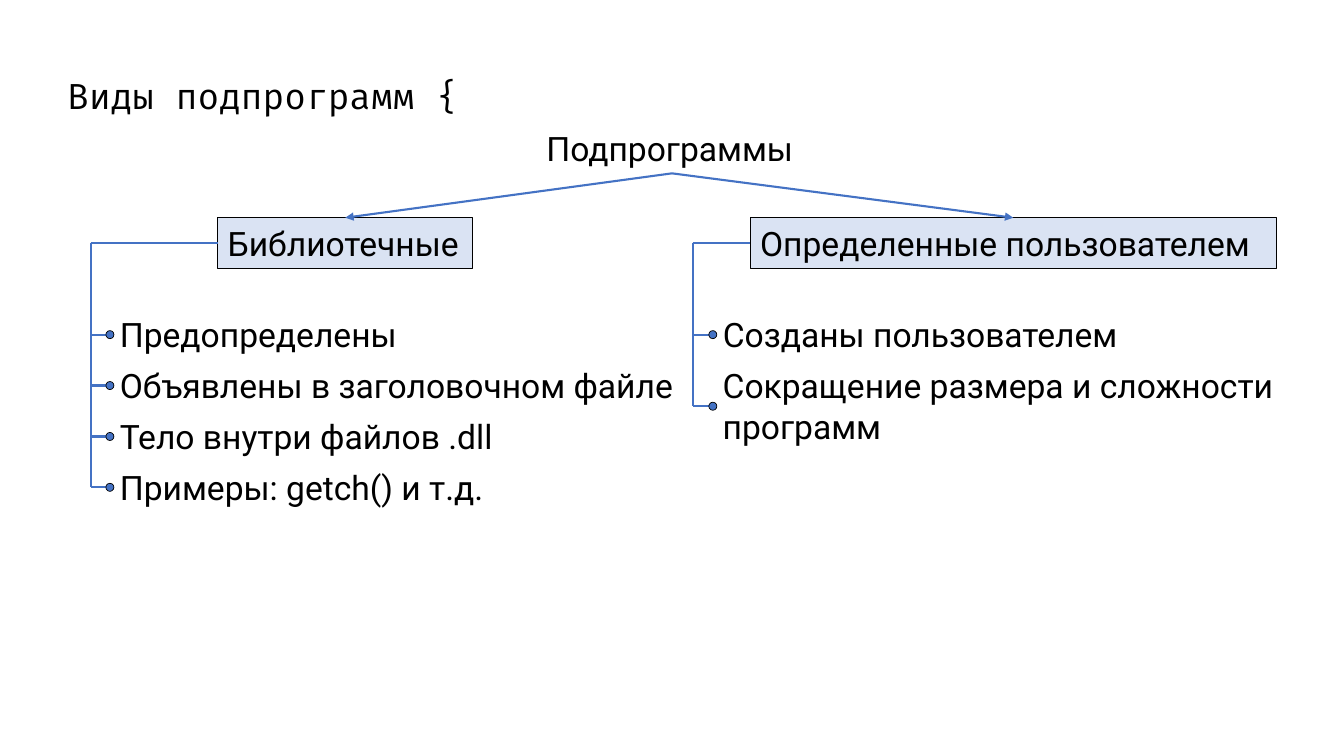
from lxml import etree
from pptx import Presentation
from pptx.dml.color import RGBColor
from pptx.enum.shapes import MSO_CONNECTOR as Line, MSO_SHAPE as Shape
from pptx.enum.text import MSO_ANCHOR as Anchor, MSO_AUTO_SIZE as AutoSize, PP_ALIGN as Align
from pptx.oxml.ns import qn
from pptx.util import Inches, Pt

COLORS = {"text": "000000", "box": "DAE3F3", "accent": "4472C4"}
ROW = 0.505       # step from one item to the next
LINE_BOX = 0.5    # height of a one-line label
FIRST_ITEM = 3.07
HEADING_TOP = 2.16
DOT = 0.08

prs = Presentation()
prs.slide_width, prs.slide_height = Inches(13.33), Inches(7.5)
slide = prs.slides.add_slide(prs.slide_layouts[6])
shapes = slide.shapes


def write(shape, text, wrap=False, font="Roboto", size=24):
    frame = shape.text_frame
    frame.text = text
    frame.word_wrap = wrap
    frame.auto_size = AutoSize.SHAPE_TO_FIT_TEXT
    frame.vertical_anchor = Anchor.TOP
    frame.paragraphs[0].alignment = Align.LEFT
    run_font = frame.paragraphs[0].runs[0].font
    run_font.name, run_font.size = font, Pt(size)
    run_font.color.rgb = RGBColor.from_string(COLORS["text"])
    return shape


def connect(x1, y1, x2, y2, arrow=False):
    link = shapes.add_connector(Line.STRAIGHT, *map(Inches, (x1, y1, x2, y2)))
    link.line.color.rgb = RGBColor.from_string(COLORS["accent"])
    link.line.width = Pt(1.5)
    if arrow:
        etree.SubElement(link.line._get_or_add_ln(), qn("a:tailEnd"), type="triangle")
    etree.SubElement(link._element.spPr, qn("a:effectLst"))
    return link


# Title
title = write(shapes.add_textbox(*map(Inches, (0.57, 0.73, 12.53, 0.49))),
              "Виды подпрограмм {", True, "Fira Code", 25.2)
title.text_frame.auto_size = AutoSize.NONE
title.text_frame.vertical_anchor = Anchor.MIDDLE
title.text_frame.paragraphs[0].line_spacing = 0.9

# Root of the tree
root = write(shapes.add_textbox(*map(Inches, (5.32, 1.22, 2.69, LINE_BOX))), "Подпрограммы")

# Branches: heading, its left and width, trunk x, items' left,
# items as (text, width, height)
branches = [
    ("Библиотечные", 2.16, 2.53, 0.9, 1.09, [
        ("Предопределены", 2.98, LINE_BOX),
        ("Объявлены в заголовочном файле", 5.75, LINE_BOX),
        ("Тело внутри файлов .dll", 3.96, LINE_BOX),
        ("Примеры: getch() и т.д.", 3.85, LINE_BOX)]),
    ("Определенные пользователем", 7.44, 5.22, 6.87, 7.07, [
        ("Созданы пользователем", 4.18, LINE_BOX),
        ("Сокращение размера и сложности программ", 6.03, 0.91)]),
]

for name, left, width, trunk, item_left, items in branches:
    # Heading box and the arrow from the root
    heading = shapes.add_shape(
        Shape.RECTANGLE, *map(Inches, (left, HEADING_TOP, width, LINE_BOX)))
    heading.shadow.inherit = False
    heading.fill.solid()
    heading.fill.fore_color.rgb = RGBColor.from_string(COLORS["box"])
    heading.line.color.rgb = RGBColor.from_string(COLORS["text"])
    heading.line.width = Pt(0.75)
    write(heading, name)
    arrow = connect(6.67, 1.72, left + width / 2, HEADING_TOP, arrow=True)
    arrow.begin_connect(root, 2)
    arrow.end_connect(heading, 0)

    # Trunk down from the heading
    heading_mid = HEADING_TOP + LINE_BOX / 2
    connect(trunk, heading_mid, left, heading_mid).end_connect(heading, 1)
    last_mid = FIRST_ITEM + (len(items) - 1) * ROW + items[-1][2] / 2
    connect(trunk, heading_mid, trunk, last_mid)

    # Items, each with its twig and dot
    for row, (text, item_width, height) in enumerate(items):
        top = FIRST_ITEM + row * ROW
        mid = top + height / 2
        item = write(shapes.add_textbox(*map(Inches, (item_left, top, item_width, height))),
                     text, wrap=height > LINE_BOX)
        connect(trunk, mid, item_left, mid).end_connect(item, 1)
        dot = shapes.add_shape(
            Shape.OVAL, *map(Inches, (item_left - DOT / 2, mid - DOT / 2, DOT, DOT)))
        dot.shadow.inherit = False
        dot.fill.solid()
        dot.fill.fore_color.rgb = RGBColor.from_string(COLORS["accent"])
        dot.line.color.rgb = RGBColor.from_string(COLORS["text"])
        dot.line.width = Pt(0.5)

prs.save("out.pptx")
